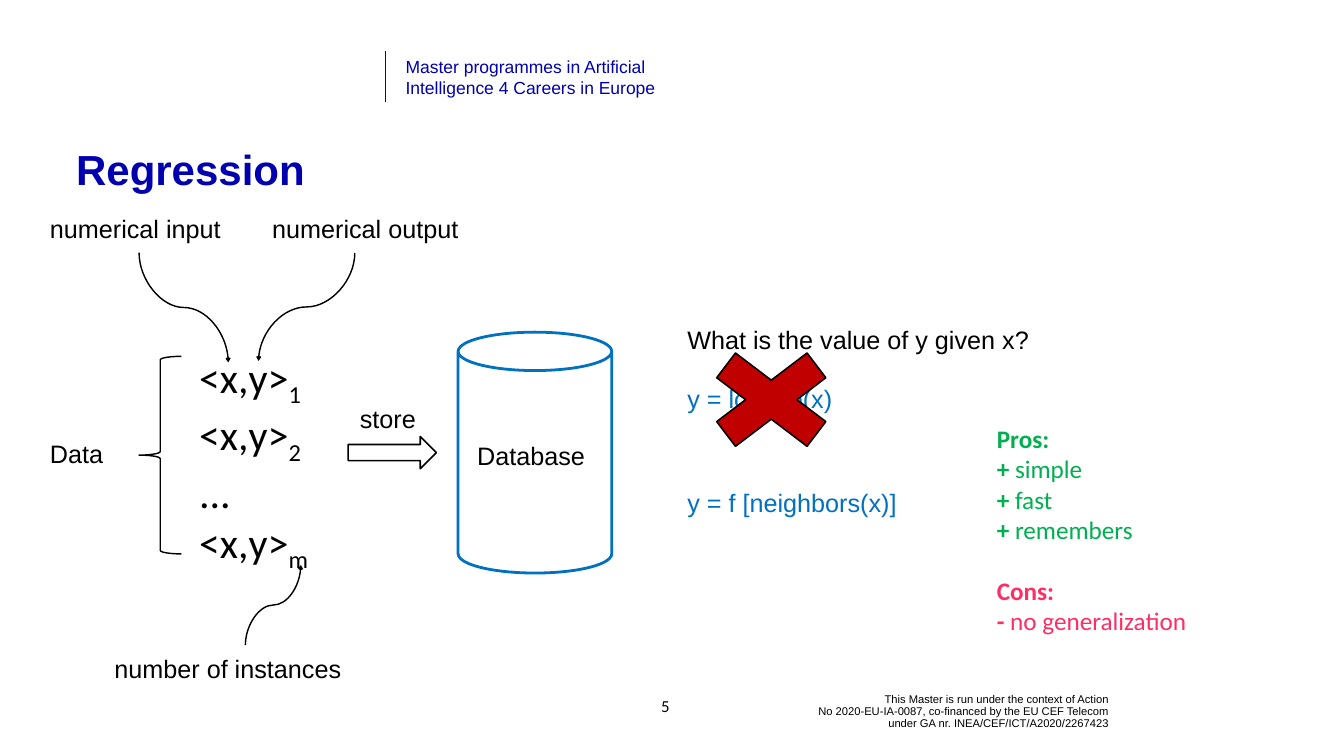
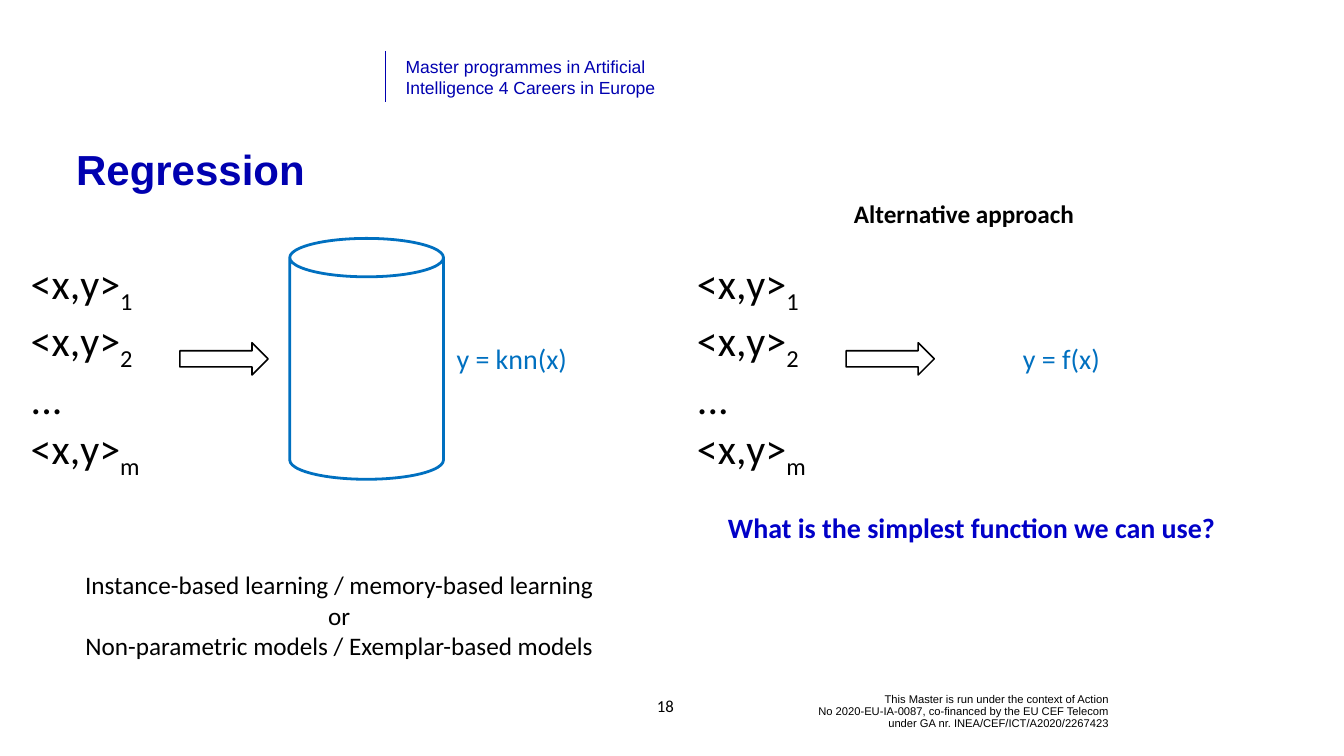
"""Build two slides on regression: storing the data, and fitting a function."""
from pptx import Presentation
from pptx.dml.color import RGBColor
from pptx.enum.shapes import MSO_CONNECTOR as LINK, MSO_SHAPE as KIND
from pptx.enum.text import MSO_ANCHOR as ANCHOR, PP_ALIGN as ALIGN
from pptx.oxml.ns import qn
from pptx.util import Inches, Pt
from lxml.etree import SubElement

NAVY, BLUE, BLACK, WHITE = "0000B0", "0070C0", "000000", "FFFFFF"
GREEN, PINK, RED, ROYAL = "00B050", "FF2D64", "C00000", "0100C8"
SANS, BODY = "Arial", "Calibri"
hue = RGBColor.from_string


def write(slide, box, lines, size=36, font=SANS, color=BLACK, bold=False,
          align=ALIGN.LEFT, anchor=ANCHOR.TOP, pad=0.06):
    """Add a text box; a bar in a line starts a second run."""
    frame = slide.shapes.add_textbox(*map(Inches, box)).text_frame
    frame.word_wrap = True
    frame.vertical_anchor = anchor
    frame.margin_left = frame.margin_right = Inches(pad or 0.1)
    frame.margin_top = frame.margin_bottom = Inches(pad or 0.05)
    frame.text = "\n".join(lines)
    for para in frame.paragraphs:
        head, bar, rest = para.text.partition("|")
        if bar:
            para.text = head
            para.add_run().text = rest
        para.alignment = align
        for run in para.runs:
            run.font.size, run.font.name, run.font.bold = Pt(size), font, bold
            run.font.color.rgb = hue(color)
    return frame


def draw(slide, kind, box, fill, line, width):
    """Add a preset shape with plain fill and line."""
    shape = slide.shapes.add_shape(kind, *map(Inches, box))
    shape.shadow.inherit = False
    if fill:
        shape.fill.solid()
        shape.fill.fore_color.rgb = hue(fill)
    else:
        shape.fill.background()
    shape.line.color.rgb = hue(line)
    shape.line.width = Pt(width)


deck = Presentation()
deck.slide_width, deck.slide_height = Inches(26.67), Inches(15)

slides = []
for number in ("5", "18"):
    slide = deck.slides.add_slide(deck.slide_layouts[5])
    slides.append(slide)
    title = slide.shapes.title
    title.left, title.top = Inches(1.41), Inches(2.83)
    title.width, title.height = Inches(23.61), Inches(2.29)
    frame = title.text_frame
    frame.text = "Regression"
    frame.vertical_anchor = ANCHOR.TOP
    para = frame.paragraphs[0]
    para.alignment, para.line_spacing = ALIGN.LEFT, Pt(70)
    face = para.runs[0].font
    face.size, face.name, face.bold = Pt(60), SANS, True
    face.color.rgb = hue(NAVY)

    foot = write(slide, (15.02, 13.74, 7.08, 0.76),
                 ["This Master is run under the context of Action\v"
                  "No 2020-EU-IA-0087, co-financed by the EU CEF Telecom\v"
                  "under GA nr. INEA/CEF/ICT/A2020/2267423"],
                 16, align=ALIGN.RIGHT, anchor=ANCHOR.MIDDLE, pad=0)
    foot.paragraphs[0].line_spacing = 0.9
    rule = slide.shapes.add_connector(
        LINK.STRAIGHT, *map(Inches, (7.65, 1.01, 7.65, 2.03)))
    rule.line.color.rgb, rule.line.width = hue(NAVY), Pt(0.5)
    SubElement(rule._element.spPr, qn("a:effectLst"))
    write(slide, (7.95, 1.06, 6.37, 0.94),
          ["Master programmes in Artificial\vIntelligence 4 Careers in Europe"],
          25, color=NAVY, pad=0)
    write(slide, (12.65, 13.61, 1.11, 0.8), [number], 24, BODY,
          align=ALIGN.CENTER, anchor=ANCHOR.MIDDLE, pad=0)

store, model = slides

for slide, left, top, can in ((store, 3.89, 6.91, True),
                              (model, 0.55, 5.05, True),
                              (model, 13.77, 5.05, False)):
    pairs = write(slide, (left, top, 3.02, 4.15),
                  ["<x,y>|1", "<x,y>|2", "...", "<x,y>|m"], 60, BODY)
    for para in pairs.paragraphs:
        for run in para.runs[1:]:
            run._r.get_or_add_rPr().set("baseline", "-25000")
    draw(slide, KIND.RIGHT_ARROW, (left + 3.02, top + 1.75, 1.75, 0.64),
         WHITE, BLACK, 2.25)
    if can:
        draw(slide, KIND.CAN, (left + 5.2, top - 0.32, 3.05, 4.78),
             WHITE, BLUE, 4)

for label, left, top, width in (("numerical input", 0.93, 4.17, 3.71),
                                ("numerical output", 5.34, 4.17, 3.95),
                                ("Data", 0.93, 8.63, 1.49),
                                ("number of instances", 2.21, 12.9, 5.63),
                                ("store", 7.08, 7.95, 2.13),
                                ("Database", 9.41, 8.67, 2.5)):
    write(store, (left, top, width, 0.72), [label])
draw(store, KIND.LEFT_BRACE, (2.76, 7.07, 0.84, 3.92), None, BLACK, 2)

for x1, y1, x2, y2 in ((2.76, 5.01, 4.53, 7.19),
                       (7.04, 5.02, 5.13, 7.16),
                       (4.87, 12.8, 5.97, 11.21)):
    cx, cy = (x1 + x2) / 2, (y1 + y2) / 2
    ends = (cx + y1 - cy, cy - x1 + cx, cx + y2 - cy, cy - x2 + cx)
    curve = store.shapes.add_connector(LINK.CURVE, *map(Inches, ends))
    curve.rotation = 90
    curve.line.color.rgb, curve.line.width = hue(BLACK), Pt(2)
    SubElement(curve.line._get_or_add_ln(), qn("a:tailEnd"), type="arrow")
    SubElement(curve._element.spPr, qn("a:effectLst"))

query = write(store, (13.58, 6.37, 7.36, 1.93),
              ["What is the value of y given x?", "y = lookup(x)"])
query.paragraphs[1].space_before = Pt(42)
query.paragraphs[1].runs[0].font.color.rgb = hue(BLUE)
write(store, (13.58, 9.61, 4.75, 0.72), ["y = f [neighbors(x)]"], color=BLUE)
draw(store, KIND.MATH_MULTIPLY, (13.58, 6.62, 3.45, 2.62), RED, BLACK, 2.25)

notes = write(store, (19.72, 8.34, 5.14, 4.96),
              ["Pros:", "+| simple", "+| fast", "+| remembers",
               "Cons:", "-| no generalization"], font=BODY, color=GREEN)
for para in notes.paragraphs:
    para.runs[0].font.bold = True
for para in notes.paragraphs[4:]:
    for run in para.runs:
        run.font.color.rgb = hue(PINK)
notes.paragraphs[4].space_before = Pt(44)

for label, left, width in (("y = knn(x)", 9, 2.92), ("y = f(x)", 20.24, 2.18)):
    write(model, (left, 6.72, width, 0.79), [label], 40, BODY, BLUE)
for lines, left, top, height, size, color, bold in (
        (["Instance-based learning / memory-based learning", "or",
          "Non-parametric models / Exemplar-based models"],
         1.53, 11.24, 1.93, 36, BLACK, False),
        (["Alternative approach"], 13.93, 3.88, 0.72, 36, BLACK, True),
        (["What is the simplest function we can use?"],
         14.08, 10.06, 0.79, 40, ROYAL, True)):
    write(model, (left, top, 10.4, height), lines, size, BODY, color, bold,
          ALIGN.CENTER, ANCHOR.MIDDLE)

deck.save("out.pptx")
